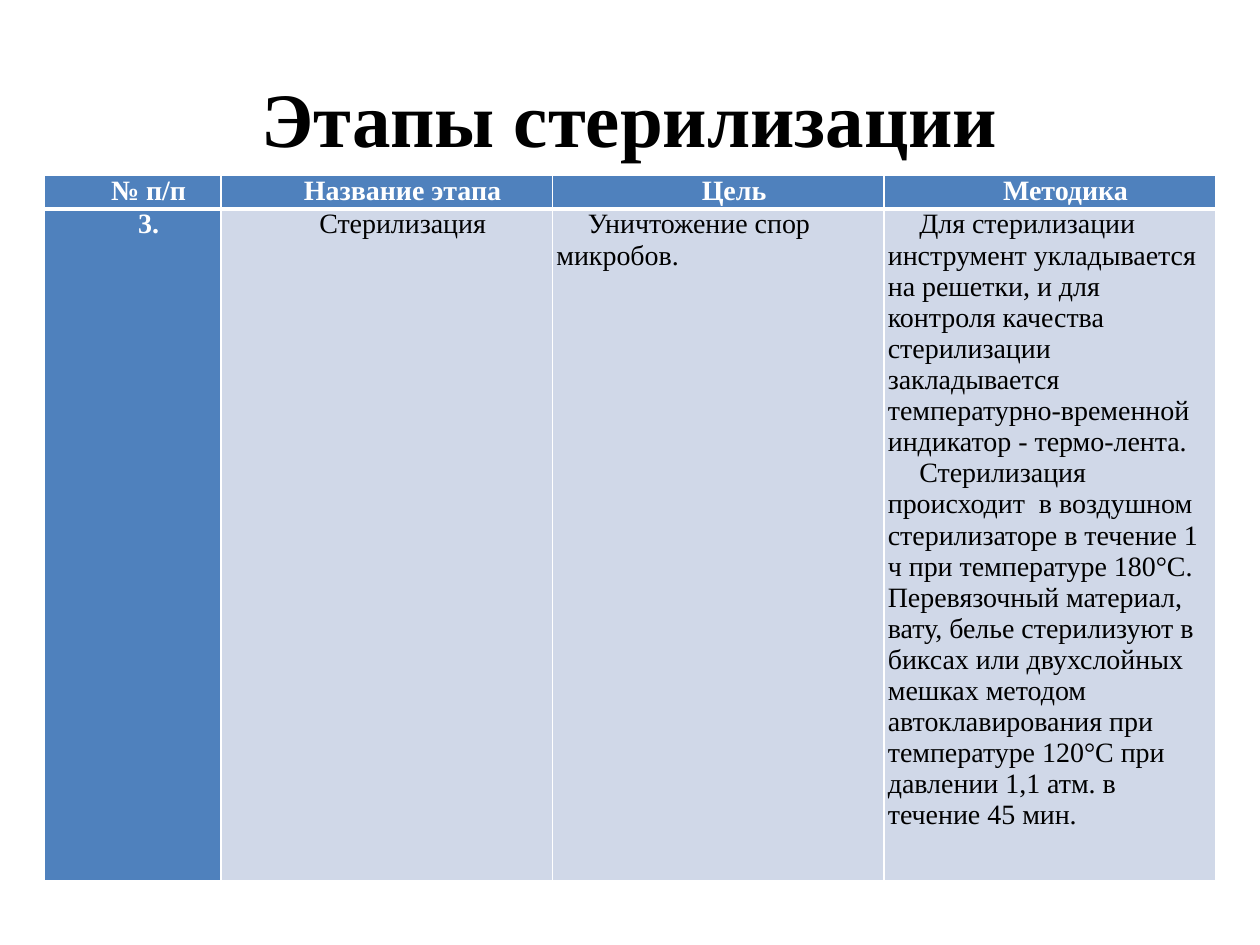
"""Build the slide with the table of sterilization stages."""
import copy
from dataclasses import dataclass

import pptx
import pptx.dml.color
import pptx.enum.text
import pptx.oxml
import pptx.oxml.ns
import pptx.util

Pt = pptx.util.Pt
RGB = pptx.dml.color.RGBColor
ALIGN = pptx.enum.text.PP_ALIGN
ANCHOR = pptx.enum.text.MSO_ANCHOR


@dataclass(frozen=True)
class Theme:
    font: str = "Times New Roman"
    title_size: float = 44
    table_size: float = 16
    dark: str = "000000"
    light: str = "FFFFFF"
    head_fill: str = "4F81BD"
    body_fill: str = "D0D8E8"


@dataclass(frozen=True)
class Entry:
    paragraphs: tuple[str, ...]
    head: bool = False
    centred: bool = True
    bottom: float = 1


THEME = Theme()
COLUMNS = (101, 189.4, 189.4, 189.4)
ROWS = (17, 373)
MARGINS = {"margin_left": 2.2, "margin_top": 0, "margin_right": 2.2, "margin_bottom": 0}
HEADINGS = ("№ п/п", "Название этапа", "Цель", "Методика")
METHOD = (
    "Для стерилизации инструмент укладывается на решетки, и для контроля качества "
    "стерилизации закладывается температурно-временной индикатор - термо-лента.",
    "Стерилизация происходит  в воздушном стерилизаторе в течение 1 ч при температуре 180°С. \n"
    "Перевязочный материал, вату, белье стерилизуют в биксах или двухслойных мешках методом "
    "автоклавирования при температуре 120°C при давлении 1,1 атм. в течение 45 мин.",
)
ENTRIES = (
    tuple(Entry((h,), head=True, bottom=3) for h in HEADINGS),
    (
        Entry(("3.",), head=True),
        Entry(("Стерилизация",)),
        Entry(("Уничтожение спор микробов.",), centred=False),
        Entry(METHOD, centred=False),
    ),
)


def write(p, text: str, size: float, color: str, bold: bool, align) -> None:
    """Write one formatted paragraph."""
    p.text = text
    p.alignment = align
    for r in p.runs:
        for name, value in {"name": THEME.font, "size": Pt(size), "bold": bold}.items():
            setattr(r.font, name, value)
        r.font.color.rgb = RGB.from_string(color)
    for br in p._p.findall(pptx.oxml.ns.qn("a:br")):
        br.insert(0, copy.deepcopy(p.runs[0]._r.rPr))


def add_borders(cell, widths: dict[str, float]) -> None:
    """Put solid lines on the sides of a cell."""
    tc_pr = cell._tc.get_or_add_tcPr()
    for i, (side, width) in enumerate(widths.items()):
        tc_pr.insert(i, pptx.oxml.parse_xml(
            f'<a:ln{side} {pptx.oxml.ns.nsdecls("a")} w="{Pt(width)}"><a:solidFill>'
            f'<a:srgbClr val="{THEME.light}"/></a:solidFill></a:ln{side}>'))


def fill_cell(cell, entry: Entry, top: float) -> None:
    """Fill a table cell with its text, colour and borders."""
    for name, value in MARGINS.items():
        setattr(cell, name, Pt(value))
    cell.fill.solid()
    cell.fill.fore_color.rgb = RGB.from_string(THEME.head_fill if entry.head else THEME.body_fill)
    add_borders(cell, {"L": 1, "R": 1, "T": top, "B": entry.bottom})
    tf = cell.text_frame
    for i, text in enumerate(entry.paragraphs):
        p = tf.add_paragraph() if i else tf.paragraphs[0]
        write(p, text, THEME.table_size, THEME.light if entry.head else THEME.dark,
              entry.head, ALIGN.CENTER if entry.centred else ALIGN.LEFT)
        p_pr = p._p.get_or_add_pPr()
        p_pr.set("marL", "0")
        p_pr.set("indent", str(Pt(18)))


def add_title(s) -> None:
    """Add the slide title."""
    tf = s.shapes.add_textbox(Pt(36), Pt(21.6), Pt(648), Pt(90)).text_frame
    tf.word_wrap = True
    tf.vertical_anchor = ANCHOR.MIDDLE
    write(tf.paragraphs[0], "Этапы стерилизации", THEME.title_size, THEME.dark, True, ALIGN.CENTER)


def add_stages(s) -> None:
    """Add the table of stages."""
    table = s.shapes.add_table(len(ROWS), len(COLUMNS), Pt(25.4), Pt(100.2),
                               Pt(sum(COLUMNS)), Pt(sum(ROWS))).table
    table.horz_banding = False
    for column, width in zip(table.columns, COLUMNS):
        column.width = Pt(width)
    for i, (row, height) in enumerate(zip(table.rows, ROWS)):
        row.height = Pt(height)
        for cell, entry in zip(row.cells, ENTRIES[i]):
            fill_cell(cell, entry, ENTRIES[i - 1][0].bottom if i else 1)


def main() -> None:
    """Build and save the slide."""
    prs = pptx.Presentation()
    prs.slide_width, prs.slide_height = Pt(720), Pt(540)
    s = prs.slides.add_slide(prs.slide_layouts[6])
    add_title(s)
    add_stages(s)
    prs.save("out.pptx")


if __name__ == "__main__":
    main()
